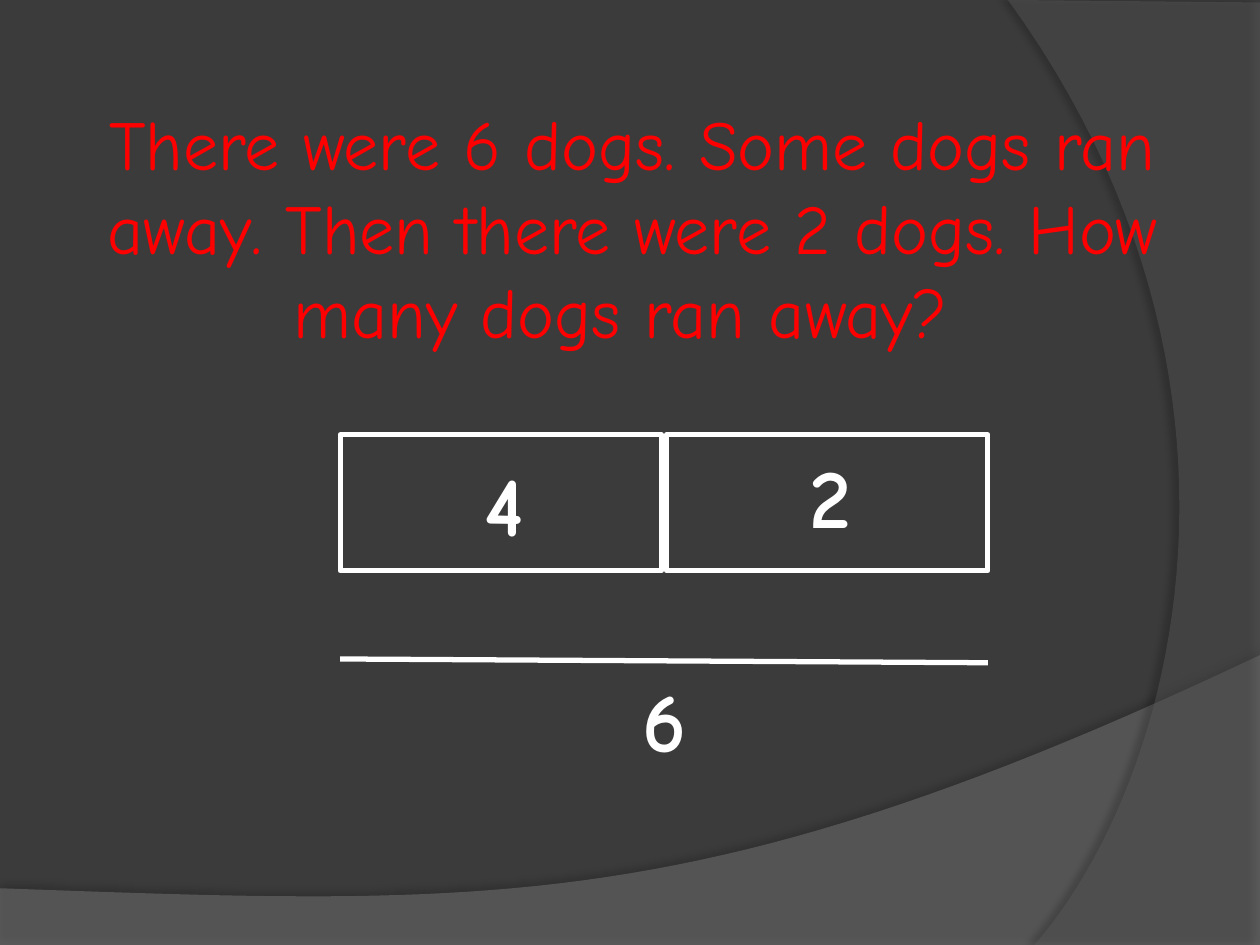
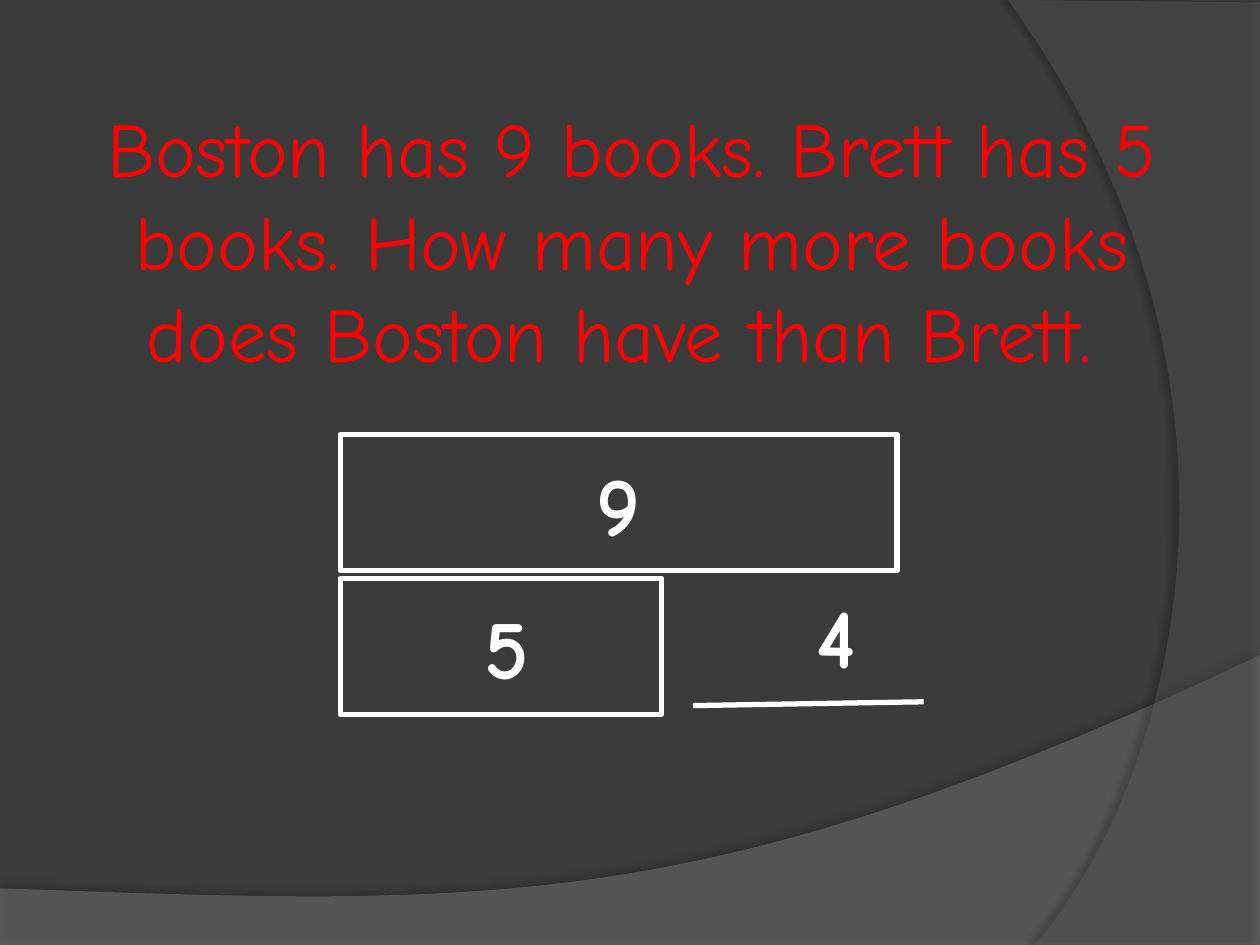
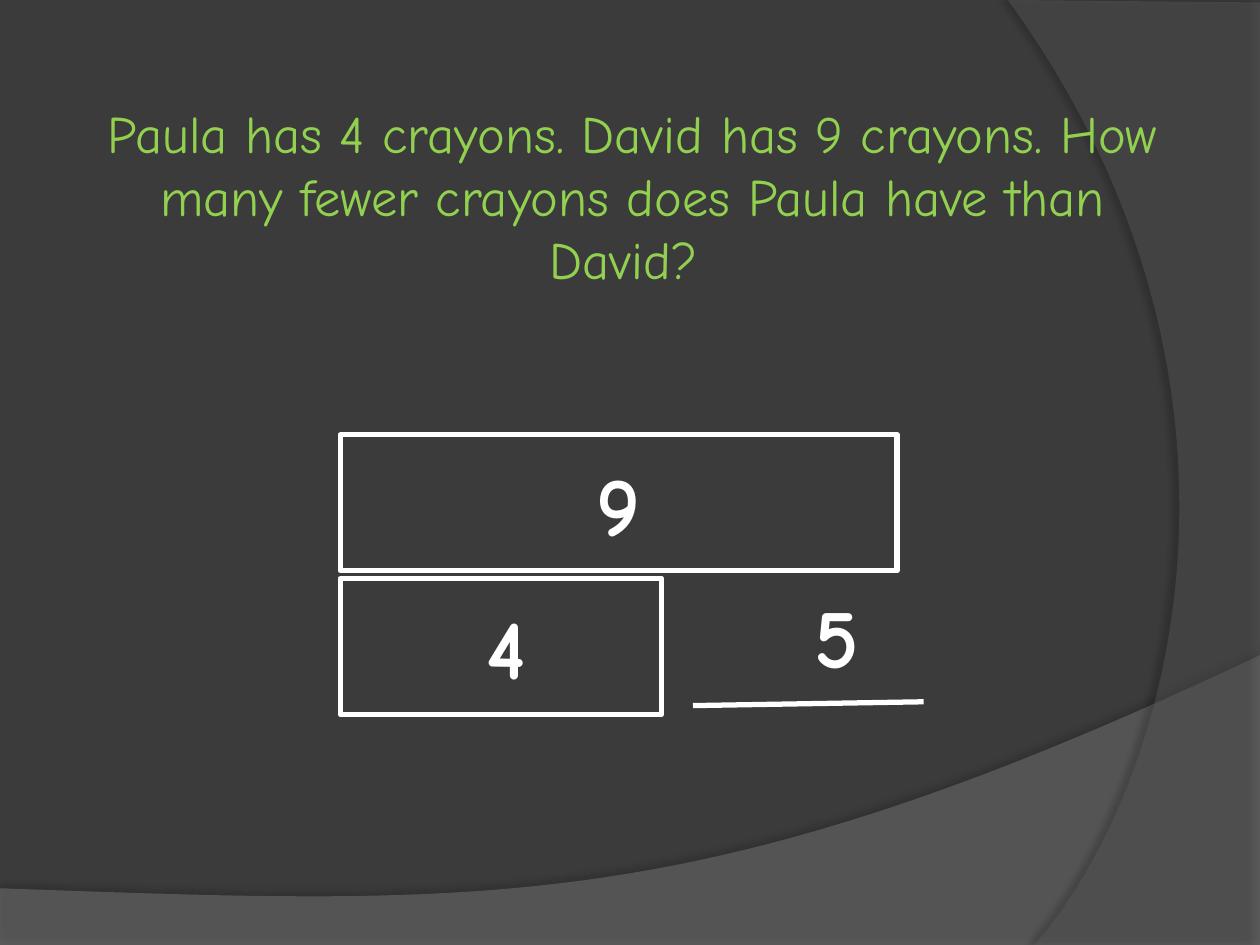
from dataclasses import dataclass

import lxml.etree
import pptx
import pptx.dml.color
import pptx.enum.shapes
import pptx.enum.text
import pptx.oxml.ns
import pptx.presentation
import pptx.slide
import pptx.text.text
import pptx.util

Inches = pptx.util.Inches
RGBColor = pptx.dml.color.RGBColor
Point = tuple[float, float]

BACKGROUND = RGBColor(0x3B, 0x3B, 0x3B)
LOWER_BAND = RGBColor(0x7F, 0x7F, 0x7F)
SIDE_BAND = RGBColor(0x5E, 0x5E, 0x5E)
WHITE = RGBColor(0xFF, 0xFF, 0xFF)
RED = RGBColor(0xFF, 0x00, 0x00)
GREEN = RGBColor(0x92, 0xD0, 0x50)

FONT = "Comic Neue"
NUMBER_SIZE = 48
LINE_WIDTH = pptx.util.Pt(3)
BAR_LEFT = 2.7
BAR_TOP = 3.45
BAR_HEIGHT = 1.08
PART_WIDTH = 2.55
WHOLE_WIDTH = 4.42
SECOND_ROW_TOP = 4.59
LABEL_WIDTH = 2.58
LABEL_HEIGHT = 0.91
CURVE_STEPS = 48
TITLE_ONLY = 5


@dataclass(frozen=True)
class Band:
    outline: list[Point]
    color: RGBColor
    opacity: int
    shadow_opacity: int
    shadow_distance: float
    shadow_angle: int


@dataclass(frozen=True)
class Bar:
    left: float
    top: float
    width: float


@dataclass(frozen=True)
class Label:
    text: str
    left: float
    top: float


@dataclass(frozen=True)
class Rule:
    start: Point
    end: Point


@dataclass(frozen=True)
class Problem:
    question: str
    size: int
    color: RGBColor
    bars: list[Bar]
    labels: list[Label]
    rule: Rule


def curve(start: Point, first: Point, second: Point, end: Point) -> list[Point]:
    points = []
    for step in range(CURVE_STEPS + 1):
        t = step / CURVE_STEPS
        weights = ((1 - t) ** 3, 3 * t * (1 - t) ** 2, 3 * t**2 * (1 - t), t**3)
        controls = (start, first, second, end)
        x, y = (
            sum(weight * control[axis] for weight, control in zip(weights, controls))
            for axis in (0, 1)
        )
        points.append((x, y))
    return points


BANDS = [
    Band(
        [(0, 7.5), (10, 7.5)] + curve((10, 5.2), (5.59, 7.29), (3.91, 7.19), (0, 7.05)),
        LOWER_BAND, 45, 35, 3.5, 270,
    ),
    Band(
        [(10, 0.02), (10, 7.5)] + curve((8.21, 7.5), (9.35, 6.19), (10.18, 3), (8, 0)),
        SIDE_BAND, 40, 45, 4, 180,
    ),
]


def comparison(
    question: str, size: int, color: RGBColor, whole: str, part: str, difference: str
) -> Problem:
    return Problem(
        question,
        size,
        color,
        [Bar(BAR_LEFT, BAR_TOP, WHOLE_WIDTH), Bar(BAR_LEFT, SECOND_ROW_TOP, PART_WIDTH)],
        [Label(part, 2.73, 4.68), Label(whole, 3.62, 3.54), Label(difference, 5.35, 4.59)],
        Rule((7.33, 5.57), (5.5, 5.6)),
    )


PROBLEMS = [
    Problem(
        "There were 6 dogs. Some dogs ran away. Then there were 2 dogs. "
        "How many dogs ran away? ",
        40,
        RED,
        [Bar(BAR_LEFT, BAR_TOP, PART_WIDTH), Bar(5.29, BAR_TOP, PART_WIDTH)],
        [Label("2", 5.3, 3.48), Label("6", 3.98, 5.26), Label("4", 2.71, 3.54)],
        Rule((7.84, 5.26), (2.7, 5.23)),
    ),
    comparison(
        "Boston has 9 books. Brett has 5 books. "
        "How many more books does Boston have than Brett. ",
        44, RED, "9", "5", "4",
    ),
    comparison(
        "Paula has 4 crayons. David has 9 crayons. "
        "How many fewer crayons does Paula have than David? ",
        30, GREEN, "9", "4", "5",
    ),
]


def add_child(parent: lxml.etree._Element, tag: str, **attributes: object) -> lxml.etree._Element:
    child = lxml.etree.SubElement(parent, pptx.oxml.ns.qn(tag))
    for name, value in attributes.items():
        child.set(name, str(value))
    return child


def add_band(
    presentation: pptx.presentation.Presentation, slide: pptx.slide.Slide, band: Band, index: int
) -> None:
    points = [(Inches(x), Inches(y)) for x, y in band.outline]
    builder = slide.shapes.build_freeform(*points[0])
    builder.add_line_segments(points[1:], close=True)
    shape = builder.convert_to_shape()
    shape.fill.solid()
    shape.fill.fore_color.rgb = band.color
    shape.line.fill.background()
    properties = shape.element.spPr
    fill_color = properties.find(pptx.oxml.ns.qn("a:solidFill"))[0]
    add_child(fill_color, "a:alpha", val=band.opacity * 1000)
    shadow = add_child(
        add_child(properties, "a:effectLst"),
        "a:outerShdw",
        blurRad=pptx.util.Pt(4),
        dist=pptx.util.Pt(band.shadow_distance),
        dir=band.shadow_angle * 60000,
        algn="ctr",
        rotWithShape=0,
    )
    shadow_color = add_child(shadow, "a:srgbClr", val="000000")
    add_child(shadow_color, "a:alpha", val=band.shadow_opacity * 1000)
    shape.element.nvSpPr.cNvPr.set("id", str(100 + index))
    presentation.slide_master.shapes.element.insert(2 + index, shape.element)


def write_text(
    text_frame: pptx.text.text.TextFrame, text: str, size: int, color: RGBColor, bold: bool
) -> None:
    text_frame.word_wrap = True
    paragraph = text_frame.paragraphs[0]
    paragraph.alignment = pptx.enum.text.PP_ALIGN.CENTER
    run = paragraph.add_run()
    run.text = text
    run.font.name = FONT
    run.font.size = pptx.util.Pt(size)
    run.font.bold = bold
    run.font.color.rgb = color


def write_question(slide: pptx.slide.Slide, problem: Problem) -> None:
    title = slide.shapes.title
    title.left, title.top = Inches(0.5), Inches(0.75)
    title.width, title.height = Inches(9), Inches(5.95)
    text_frame = title.text_frame
    text_frame.auto_size = pptx.enum.text.MSO_AUTO_SIZE.NONE
    text_frame.vertical_anchor = pptx.enum.text.MSO_ANCHOR.TOP
    text_frame.margin_left = Inches(0.14)
    write_text(text_frame, problem.question, problem.size, problem.color, False)
    text_frame.paragraphs[0].space_before = pptx.util.Pt(problem.size * 0.2)


def add_bar(slide: pptx.slide.Slide, bar: Bar) -> None:
    shape = slide.shapes.add_shape(
        pptx.enum.shapes.MSO_SHAPE.RECTANGLE,
        Inches(bar.left), Inches(bar.top), Inches(bar.width), Inches(BAR_HEIGHT),
    )
    shape.shadow.inherit = False
    shape.fill.background()
    shape.line.color.rgb = WHITE
    shape.line.width = LINE_WIDTH


def add_label(slide: pptx.slide.Slide, label: Label) -> None:
    text_box = slide.shapes.add_textbox(
        Inches(label.left), Inches(label.top), Inches(LABEL_WIDTH), Inches(LABEL_HEIGHT)
    )
    text_box.text_frame.auto_size = pptx.enum.text.MSO_AUTO_SIZE.SHAPE_TO_FIT_TEXT
    write_text(text_box.text_frame, label.text, NUMBER_SIZE, WHITE, True)


def add_rule(slide: pptx.slide.Slide, rule: Rule) -> None:
    connector = slide.shapes.add_connector(
        pptx.enum.shapes.MSO_CONNECTOR.STRAIGHT,
        *(Inches(value) for value in rule.start + rule.end),
    )
    connector.line.color.rgb = WHITE
    connector.line.width = LINE_WIDTH
    add_child(connector.element.spPr, "a:effectLst")


def add_problem(presentation: pptx.presentation.Presentation, problem: Problem) -> pptx.slide.Slide:
    slide = presentation.slides.add_slide(presentation.slide_layouts[TITLE_ONLY])
    write_question(slide, problem)
    add_rule(slide, problem.rule)
    for bar in problem.bars:
        add_bar(slide, bar)
    for label in problem.labels:
        add_label(slide, label)
    return slide


def main() -> None:
    presentation = pptx.Presentation()
    presentation.slide_width = Inches(10)
    presentation.slide_height = Inches(7.5)
    background = presentation.slide_master.background.fill
    background.solid()
    background.fore_color.rgb = BACKGROUND
    slides = [add_problem(presentation, problem) for problem in PROBLEMS]
    for index, band in enumerate(BANDS):
        add_band(presentation, slides[0], band, index)
    presentation.save("out.pptx")


if __name__ == "__main__":
    main()
